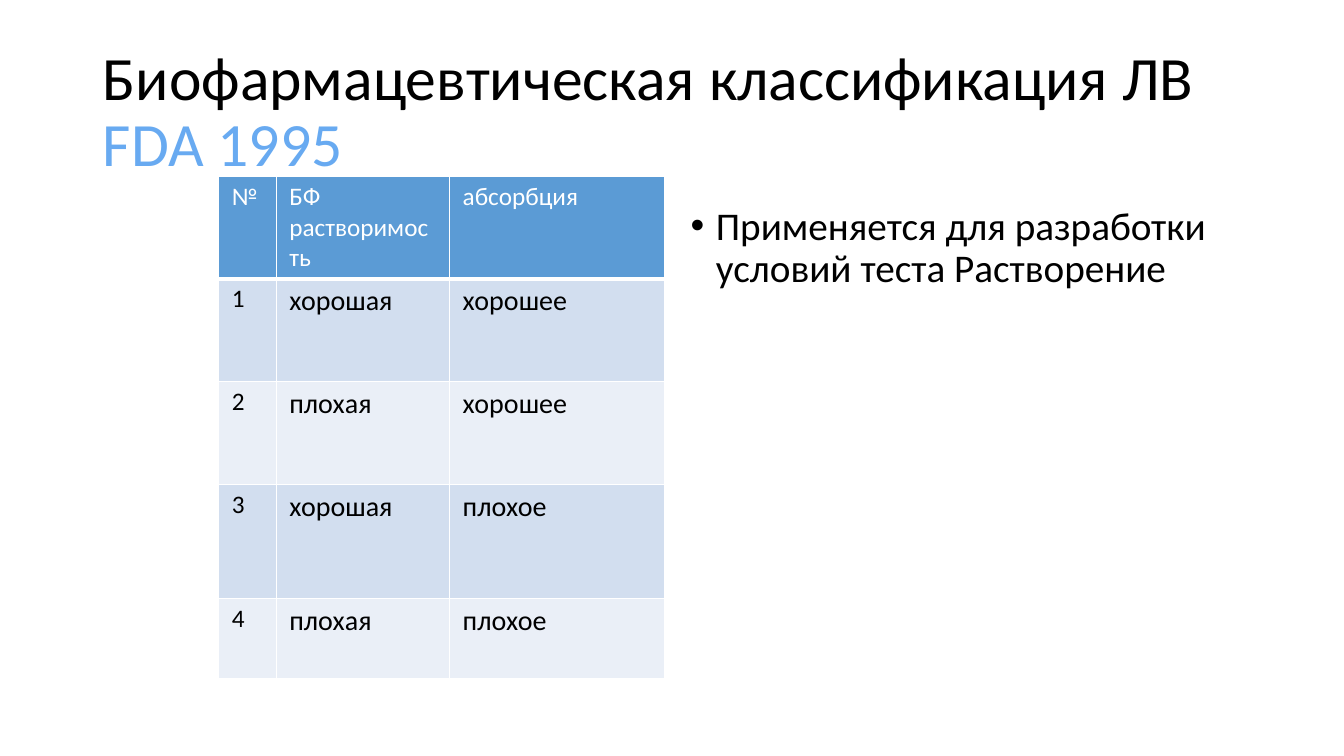
from lxml import etree
from pptx import Presentation
from pptx import util as u
from pptx.dml.color import RGBColor
from pptx.enum import text
from pptx.oxml.ns import qn

FONT = "Calibri"
BLACK, WHITE, ACCENT = "000000", "FFFFFF", "68AAF1"
HEADER_FILL, BAND_FILLS = "5B9BD5", ("D2DEEF", "EAEFF7")

COLUMN_WIDTHS = (0.57, 1.72, 2.13)
ROW_HEIGHTS = (0.8, 1.02, 1.02, 1.13, 0.8)
ROWS = (
    ("№", "БФ растворимость", "абсорбция"),
    ("1", "хорошая", "хорошее"),
    ("2", "плохая", "хорошее"),
    ("3", "хорошая", "плохое"),
    ("4", "плохая", "плохое"),
)


def set_color(target, color):
    target.rgb = RGBColor.from_string(color)


def style_paragraph(paragraph, size, color):
    paragraph.alignment = text.PP_ALIGN.LEFT
    paragraph.font.name = FONT
    paragraph.font.size = u.Pt(size)
    paragraph.font.bold = False
    set_color(paragraph.font.color, color)


def place(shape, box):
    shape.left, shape.top, shape.width, shape.height = map(u.Inches, box)


def add_title(slide, box):
    title = slide.shapes.title
    place(title, box)
    frame = title.text_frame
    frame.auto_size = text.MSO_AUTO_SIZE.NONE
    frame.vertical_anchor = text.MSO_ANCHOR.MIDDLE
    paragraph = frame.paragraphs[0]
    style_paragraph(paragraph, 44, BLACK)
    paragraph.line_spacing = 0.9
    paragraph.add_run().text = "Биофармацевтическая классификация ЛВ "
    source = paragraph.add_run()
    source.text = "FDA 1995"
    set_color(source.font.color, ACCENT)


def add_borders(cell, bottom_width):
    properties = cell._tc.get_or_add_tcPr()
    for side, width in (("L", 1), ("R", 1), ("T", 1), ("B", bottom_width)):
        line = etree.SubElement(properties, qn(f"a:ln{side}"), w=str(u.Pt(width)))
        fill = etree.SubElement(line, qn("a:solidFill"))
        etree.SubElement(fill, qn("a:srgbClr"), val=WHITE)


def add_classification_table(slide, left, top):
    box = (left, top, sum(COLUMN_WIDTHS), sum(ROW_HEIGHTS))
    table = slide.shapes.add_table(
        len(ROWS), len(COLUMN_WIDTHS), *map(u.Inches, box)).table
    for column, width in zip(table.columns, COLUMN_WIDTHS):
        column.width = u.Inches(width)
    for row_index, (row, height, values) in enumerate(
            zip(table.rows, ROW_HEIGHTS, ROWS)):
        row.height = u.Inches(height)
        is_header = row_index == 0
        for column_index, (cell, value) in enumerate(zip(row.cells, values)):
            cell.text = value
            cell.margin_left = cell.margin_right = u.Inches(0.13)
            size = 18 if is_header or column_index == 0 else 20
            style_paragraph(cell.text_frame.paragraphs[0], size,
                            WHITE if is_header else BLACK)
            add_borders(cell, 3 if is_header else 1)
            cell.fill.solid()
            set_color(cell.fill.fore_color,
                      HEADER_FILL if is_header else BAND_FILLS[(row_index - 1) % 2])


def add_purpose_list(slide, box):
    body = slide.placeholders[1]
    place(body, box)
    frame = body.text_frame
    frame.auto_size = text.MSO_AUTO_SIZE.NONE
    paragraph = frame.paragraphs[0]
    paragraph.text = "Применяется для разработки условий теста Растворение"
    style_paragraph(paragraph, 28, BLACK)
    paragraph.line_spacing = 0.9
    paragraph.space_before = u.Pt(10)
    # Hanging bullet
    properties = paragraph._p.get_or_add_pPr()
    indent = u.Inches(0.25)
    properties.set("marL", str(indent))
    properties.set("indent", str(-indent))
    bullet_font = etree.Element(qn("a:buFont"), typeface="Arial")
    bullet = etree.Element(qn("a:buChar"), char="•")
    properties.find(qn("a:defRPr")).addprevious(bullet_font)
    bullet_font.addnext(bullet)


def main():
    presentation = Presentation()
    presentation.slide_width = u.Inches(13.33)
    presentation.slide_height = u.Inches(7.5)
    slide = presentation.slides.add_slide(presentation.slide_layouts[1])
    add_title(slide, (0.92, 0.4, 11.5, 1.45))
    add_classification_table(slide, 2.17, 1.75)
    add_purpose_list(slide, (6.75, 2, 5.67, 4.76))
    presentation.save("out.pptx")


if __name__ == "__main__":
    main()
